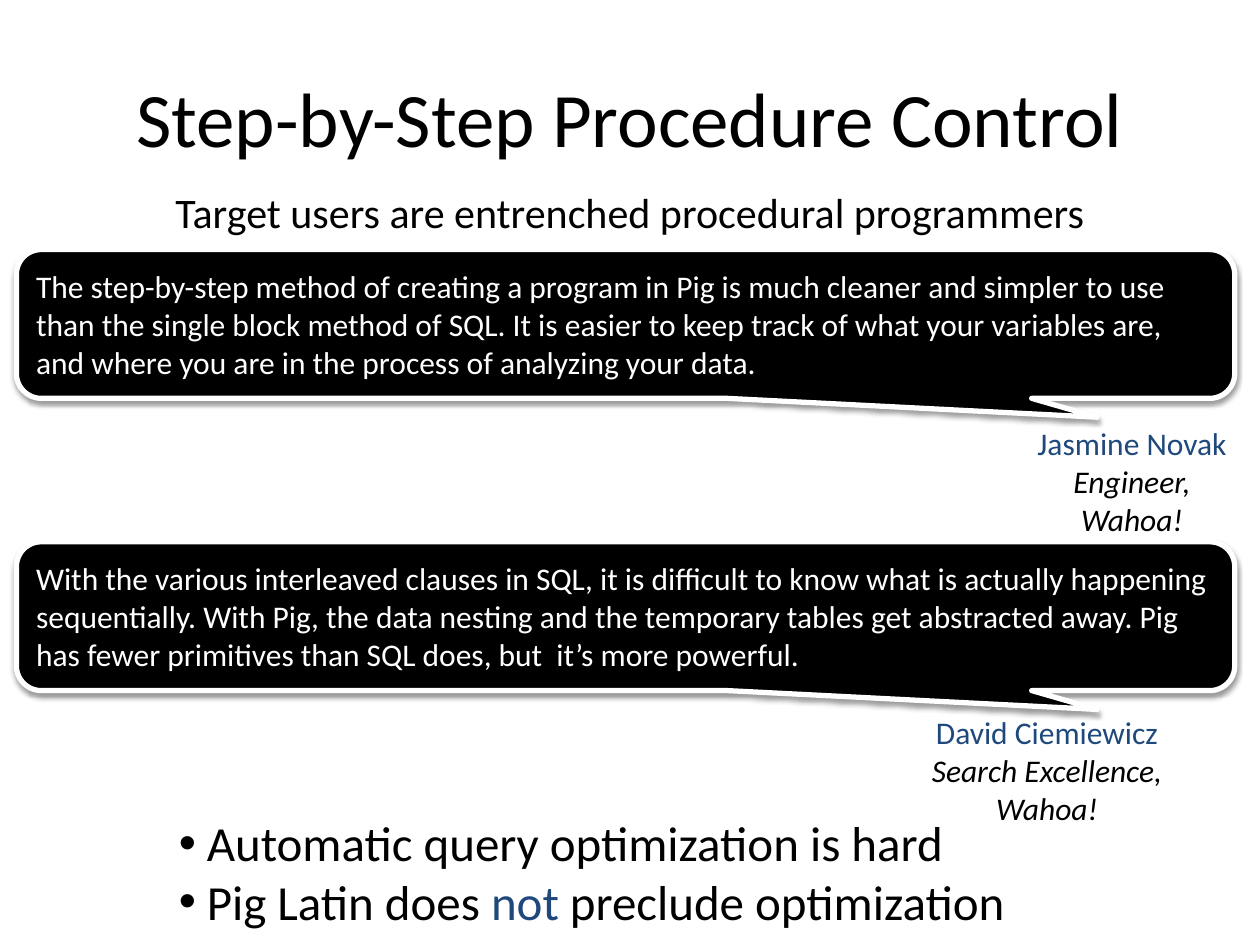
from lxml.etree import SubElement
from pptx import Presentation
from pptx.dml.color import RGBColor
from pptx.enum.shapes import MSO_SHAPE
from pptx.enum.text import MSO_ANCHOR, MSO_AUTO_SIZE, PP_ALIGN
from pptx.oxml.ns import qn
from pptx.util import Pt

COLORS = {"ink": "000000", "paper": "FFFFFF", "accent": "1F497D"}
TWO_CONTENT = 3

QUOTES = [
    {
        "text": "The step-by-step method of creating a program in Pig is much cleaner and "
                "simpler to use than the single block method of SQL. It is easier to keep "
                "track of what your variables are, and where you are in the process of "
                "analyzing your data.",
        "name": "Jasmine Novak",
        "role": "Engineer, Wahoa!",
        "callout_box": (9.4, 142.6, 696.2, 85),
        "speaker_box": (576, 239, 141.8, 51),
    },
    {
        "text": "With the various interleaved clauses in SQL, it is difficult to know what "
                "is actually happening sequentially. With Pig, the data nesting and the "
                "temporary tables get abstracted away. Pig has fewer primitives than SQL "
                "does, but  it’s more powerful.",
        "name": "David Ciemiewicz",
        "role": "Search Excellence, Wahoa!",
        "callout_box": (9.4, 309.6, 696.2, 85),
        "speaker_box": (494.6, 404, 207.4, 51),
    },
]
BULLETS = [
    [("Automatic query optimization is hard", "ink")],
    [("Pig Latin does ", "ink"), ("not", "accent"), (" preclude optimization", "ink")],
]


def rgb(color):
    return RGBColor.from_string(COLORS[color])


def set_attributes(target, values):
    for name, value in values.items():
        setattr(target, name, value)


def place(shape, box):
    names = ("left", "top", "width", "height")
    set_attributes(shape, dict(zip(names, map(Pt, box))))


def add_run(paragraph, text, color, size, italic=None):
    run = paragraph.add_run()
    run.text = text
    set_attributes(run.font, {"name": "Calibri", "size": Pt(size), "italic": italic})
    run.font.color.rgb = rgb(color)


def get_paragraph(text_frame, index):
    return text_frame.add_paragraph() if index else text_frame.paragraphs[0]


def set_bullet(paragraph, indent, character=None):
    """Hang the first line by indent points, with a bullet if a character is given."""
    properties = paragraph._p.get_or_add_pPr()
    properties.set("marL", str(Pt(indent)))
    properties.set("indent", str(Pt(-indent)))
    if character:
        SubElement(properties, qn("a:buChar"), char=character)
    else:
        SubElement(properties, qn("a:buNone"))


def add_soft_shadow(shape):
    effects = SubElement(shape._element.spPr, qn("a:effectLst"))
    shadow = SubElement(effects, qn("a:outerShdw"), blurRad=str(Pt(3.1)),
                        dist=str(Pt(1.6)), dir="5400000", rotWithShape="0")
    color = SubElement(shadow, qn("a:srgbClr"), val=COLORS["ink"])
    SubElement(color, qn("a:alpha"), val="38000")


def fill_title(shape, box):
    place(shape, box)
    shape.text_frame.vertical_anchor = MSO_ANCHOR.MIDDLE
    paragraph = shape.text_frame.paragraphs[0]
    paragraph.alignment = PP_ALIGN.CENTER
    add_run(paragraph, "Step-by-Step Procedure Control", "ink", 44)


def fill_subtitle(shape, box):
    place(shape, box)
    shape.text_frame.auto_size = MSO_AUTO_SIZE.NONE
    paragraph = shape.text_frame.paragraphs[0]
    paragraph.alignment = PP_ALIGN.CENTER
    set_bullet(paragraph, 27)
    add_run(paragraph, "Target users are entrenched procedural programmers", "ink", 24)


def fill_bullets(shape, box):
    place(shape, box)
    set_attributes(shape.text_frame, {"auto_size": MSO_AUTO_SIZE.NONE, "word_wrap": False})
    for index, parts in enumerate(BULLETS):
        paragraph = get_paragraph(shape.text_frame, index)
        paragraph.space_before = Pt(0)
        set_bullet(paragraph, 16, "•")
        for text, color in parts:
            add_run(paragraph, text, color, 28)


def add_callout(slide, box, text):
    shape = slide.shapes.add_shape(MSO_SHAPE.ROUNDED_RECTANGULAR_CALLOUT, *map(Pt, box))
    for index, value in enumerate((0.387, 0.627, 0.167)):
        shape.adjustments[index] = value
    shape.fill.solid()
    shape.fill.fore_color.rgb = rgb("ink")
    shape.line.color.rgb = rgb("paper")
    shape.line.width = Pt(3)
    add_soft_shadow(shape)
    set_attributes(shape.text_frame, {"word_wrap": True, "vertical_anchor": MSO_ANCHOR.MIDDLE})
    paragraph = shape.text_frame.paragraphs[0]
    paragraph.alignment = PP_ALIGN.LEFT
    add_run(paragraph, text, "paper", 18)


def add_speaker(slide, box, name, role):
    text_frame = slide.shapes.add_textbox(*map(Pt, box)).text_frame
    set_attributes(text_frame, {"word_wrap": False, "auto_size": MSO_AUTO_SIZE.SHAPE_TO_FIT_TEXT})
    lines = [(name, "accent", None), (role, "ink", True)]
    for index, (text, color, italic) in enumerate(lines):
        paragraph = get_paragraph(text_frame, index)
        paragraph.alignment = PP_ALIGN.CENTER
        add_run(paragraph, text, color, 18, italic)


def main():
    presentation = Presentation()
    set_attributes(presentation, {"slide_width": Pt(720), "slide_height": Pt(540)})
    slide = presentation.slides.add_slide(presentation.slide_layouts[TWO_CONTENT])
    fill_title(slide.shapes.title, (36, 21.6, 648, 90))
    fill_subtitle(slide.placeholders[1], (36, 103, 648, 48))
    fill_bullets(slide.placeholders[2], (95, 460.8, 490.3, 75))
    for quote in QUOTES:
        add_callout(slide, quote["callout_box"], quote["text"])
        add_speaker(slide, quote["speaker_box"], quote["name"], quote["role"])
    presentation.save("out.pptx")


if __name__ == "__main__":
    main()
